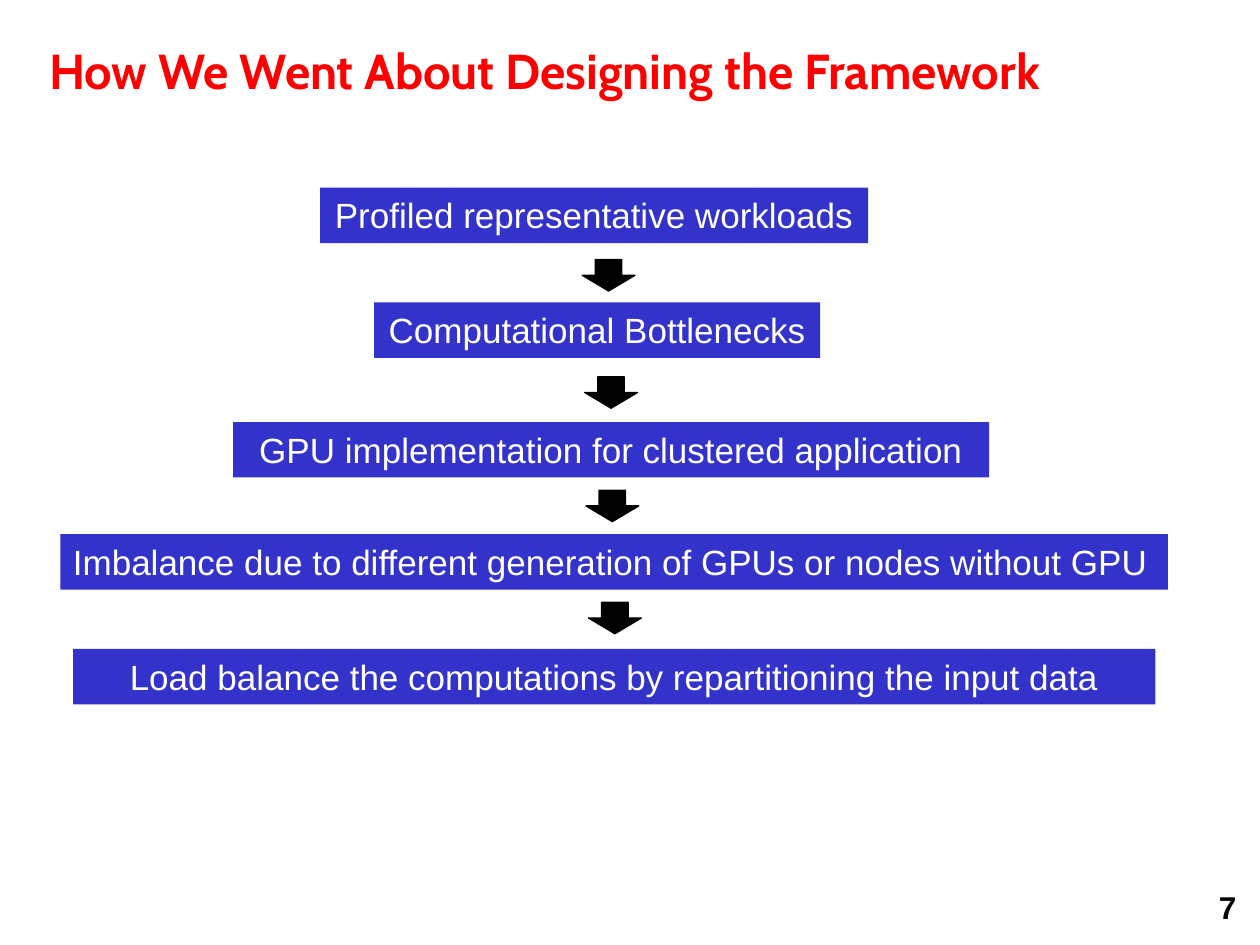
from dataclasses import dataclass

from pptx import Presentation
from pptx.dml.color import RGBColor
from pptx.enum.shapes import MSO_SHAPE as Shape
from pptx.enum.text import MSO_ANCHOR as Anchor, PP_ALIGN as Align
from pptx.util import Inches, Pt


@dataclass(frozen=True)
class Theme:
    red: RGBColor = RGBColor(0xFF, 0x00, 0x00)
    blue: RGBColor = RGBColor(0x33, 0x33, 0xCC)
    white: RGBColor = RGBColor(0xFF, 0xFF, 0xFF)
    black: RGBColor = RGBColor(0x00, 0x00, 0x00)
    title_font: str = "Cabin"
    body_font: str = "Arial"
    title_size: Pt = Pt(28)
    step_size: Pt = Pt(20)
    number_size: Pt = Pt(18)


THEME = Theme()
STEP_HEIGHT = 0.44
ARROW_WIDTH, ARROW_HEIGHT = 0.42, 0.25

STEPS = [
    ("Profiled representative workloads", 2.54, 1.49, 4.35, Align.CENTER),
    ("Computational Bottlenecks", 2.97, 2.4, 3.54, Align.CENTER),
    ("GPU implementation for clustered application", 1.85, 3.35, 6, Align.CENTER),
    ("Imbalance due to different generation of GPUs or nodes without GPU",
     0.48, 4.24, 8.79, Align.JUSTIFY),
    ("Load balance the computations by repartitioning the input data",
     0.58, 5.15, 8.59, Align.CENTER),
]
ARROWS = [(4.62, 2.06), (4.64, 2.99), (4.65, 3.89), (4.67, 4.78)]


def write_text(shape, text, align, color, **font_format):
    paragraph = shape.text_frame.paragraphs[0]
    paragraph.alignment = align
    run = paragraph.add_run()
    run.text = text
    for name, value in font_format.items():
        setattr(run.font, name, value)
    run.font.color.rgb = color


def format_frame(shape, **frame_format):
    for name, value in frame_format.items():
        setattr(shape.text_frame, name, value)


def add_title(slide, text):
    title = slide.shapes.title
    position = {"left": 0.29, "top": 0.22, "width": 9.36, "height": 0.67}
    for name, value in position.items():
        setattr(title, name, Inches(value))
    format_frame(title, word_wrap=True, vertical_anchor=Anchor.MIDDLE)
    write_text(title, text, Align.LEFT, THEME.red,
               name=THEME.title_font, size=THEME.title_size, bold=True)


def add_page_number(slide, number):
    box = slide.shapes.add_textbox(Inches(7.83), Inches(7), Inches(2.08), Inches(0.33))
    format_frame(box, word_wrap=True, vertical_anchor=Anchor.TOP)
    write_text(box, number, Align.RIGHT, THEME.black,
               name=THEME.body_font, size=THEME.number_size, bold=True)


def add_filled_shape(slide, kind, left, top, width, height, color):
    shape = slide.shapes.add_shape(
        kind, Inches(left), Inches(top), Inches(width), Inches(height))
    shape.shadow.inherit = False
    shape.fill.solid()
    shape.fill.fore_color.rgb = color
    return shape


def add_step(slide, text, left, top, width, align):
    step = add_filled_shape(
        slide, Shape.RECTANGLE, left, top, width, STEP_HEIGHT, THEME.blue)
    step.line.fill.background()
    format_frame(step, word_wrap=False, vertical_anchor=Anchor.TOP)
    write_text(step, text, align, THEME.white,
               name=THEME.body_font, size=THEME.step_size)


def add_arrow(slide, left, top):
    arrow = add_filled_shape(
        slide, Shape.DOWN_ARROW, left, top, ARROW_WIDTH, ARROW_HEIGHT, THEME.black)
    arrow.line.color.rgb = THEME.black
    arrow.line.width = Pt(0.75)


def main():
    presentation = Presentation()
    presentation.slide_width = Inches(10)
    presentation.slide_height = Inches(7.5)
    slide = presentation.slides.add_slide(presentation.slide_layouts[5])
    add_title(slide, "How We Went About Designing the Framework")
    add_page_number(slide, "7")
    for step in STEPS:
        add_step(slide, *step)
    for arrow in ARROWS:
        add_arrow(slide, *arrow)
    presentation.save("out.pptx")


if __name__ == "__main__":
    main()
